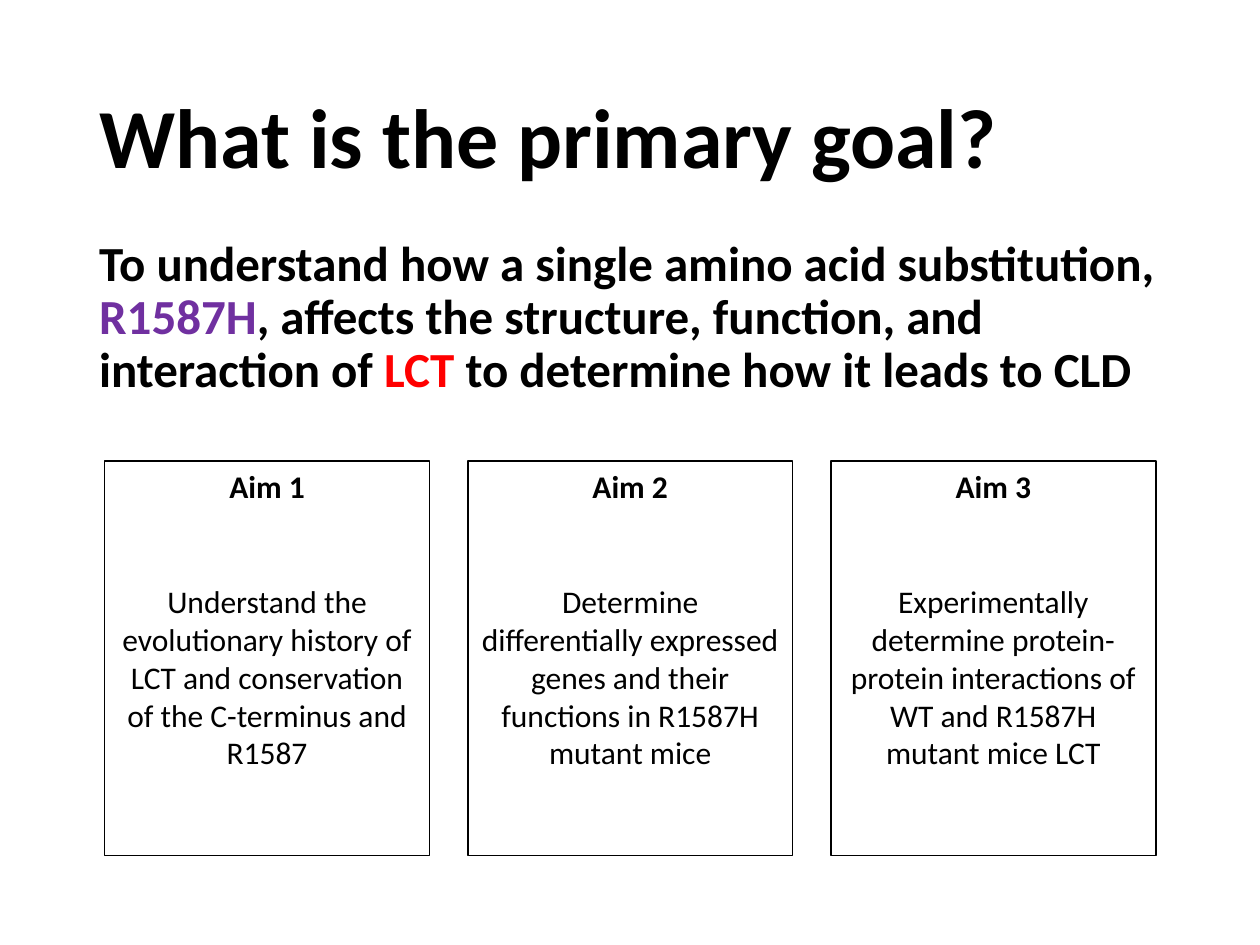
from pptx import Presentation
from pptx.dml.color import RGBColor
from pptx.enum.shapes import MSO_SHAPE as Shape
from pptx.enum.text import MSO_ANCHOR as Anchor, PP_ALIGN as Align
from pptx.util import Cm, Pt

BLACK, WHITE, PURPLE, RED = "000000", "FFFFFF", "7030A0", "FF0000"


def color(hex_string):
    return RGBColor.from_string(hex_string)


def set_font(font, size, bold):
    font.name = "Calibri"
    font.size = Pt(size)
    font.bold = bold
    font.color.rgb = color(BLACK)


presentation = Presentation()
presentation.slide_width, presentation.slide_height = Cm(25.4), Cm(19.05)
slide = presentation.slides.add_slide(presentation.slide_layouts[5])

# Title
title = slide.shapes.title
title.left, title.top, title.width, title.height = Cm(1.75), Cm(1.01), Cm(21.9), Cm(3.68)
title.text_frame.vertical_anchor = Anchor.MIDDLE
paragraph = title.text_frame.paragraphs[0]
paragraph.text = "What is the primary goal?"
paragraph.alignment = Align.LEFT
paragraph.line_spacing = 0.9
set_font(paragraph.font, 48, True)

# Goal statement with coloured key terms
goal = slide.shapes.add_textbox(Cm(1.75), Cm(4.69), Cm(21.9), Cm(3.68))
goal.text_frame.word_wrap = True
paragraph = goal.text_frame.paragraphs[0]
paragraph.line_spacing = 0.9
set_font(paragraph.font, 28, True)
for text, text_color in [
    ("To understand how a single amino acid substitution, ", BLACK),
    ("R1587H", PURPLE),
    (", affects the structure, function, and interaction of ", BLACK),
    ("LCT", RED),
    (" to determine how it leads to CLD", BLACK),
]:
    run = paragraph.add_run()
    run.text = text
    run.font.color.rgb = color(text_color)

# Aim boxes, equally spaced
aims = [
    "Understand the evolutionary history of LCT and conservation of the C-terminus and R1587",
    "Determine differentially expressed genes and their functions in R1587H mutant mice",
    "Experimentally determine protein-protein interactions of WT and R1587H mutant mice LCT",
]
box_left, box_step = 2.11, 7.32
for index, aim in enumerate(aims):
    box = slide.shapes.add_shape(
        Shape.RECTANGLE, Cm(box_left + index * box_step), Cm(9.3), Cm(6.55), Cm(7.95))
    box.shadow.inherit = False
    box.fill.solid()
    box.fill.fore_color.rgb = color(WHITE)
    box.line.color.rgb = color(BLACK)
    box.line.width = Pt(1)

    frame = box.text_frame
    frame.word_wrap = True
    frame.vertical_anchor = Anchor.TOP
    heading, description = frame.paragraphs[0], frame.add_paragraph()
    heading.text = f"Aim {index + 1}"
    description.text = aim
    description.space_before = Pt(44)
    for paragraph, bold in [(heading, True), (description, False)]:
        paragraph.alignment = Align.CENTER
        set_font(paragraph.font, 18, bold)

presentation.save("out.pptx")
